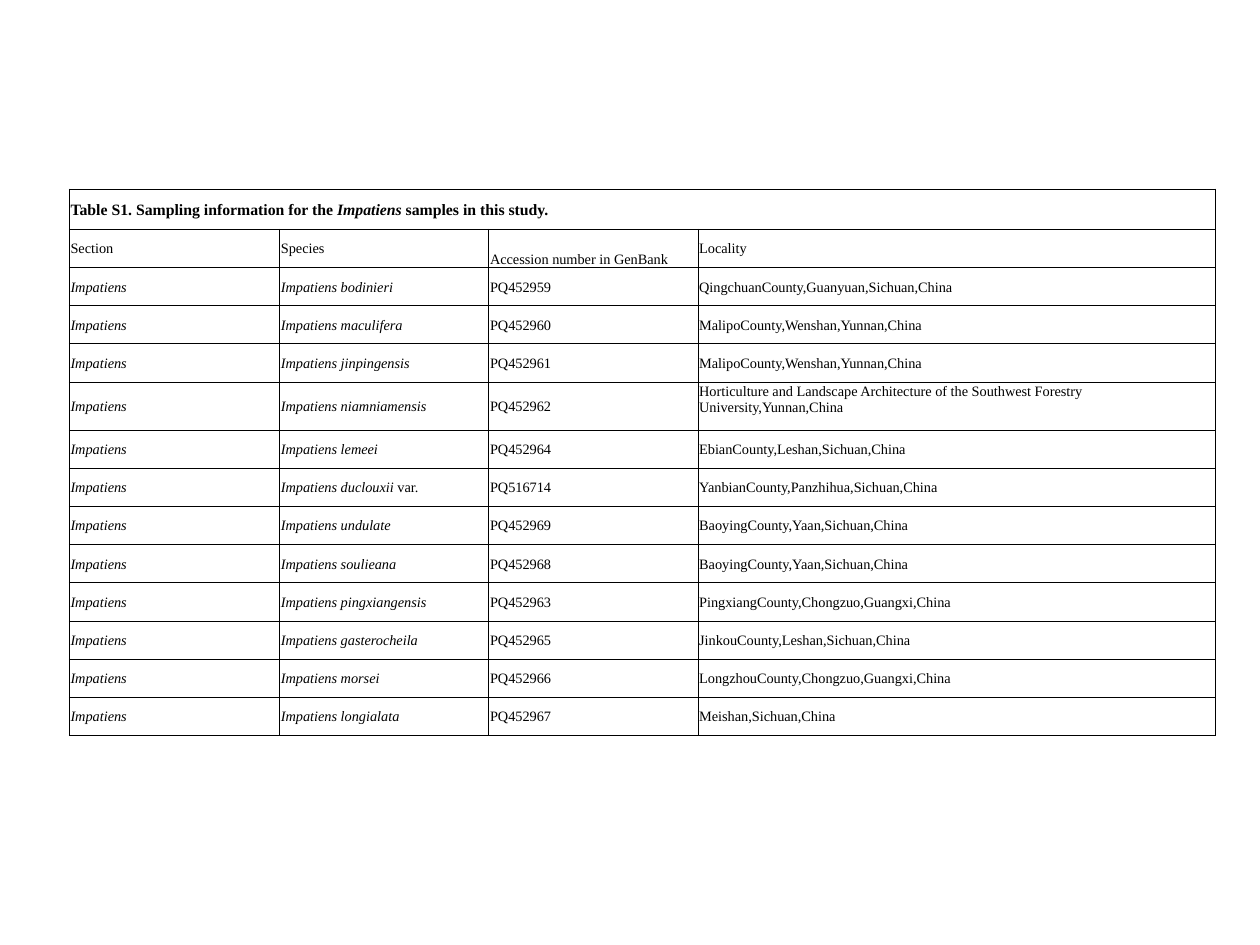
from lxml import etree
from pptx import Presentation
from pptx.dml.color import RGBColor
from pptx.enum import text
from pptx.oxml.ns import qn
from pptx.util import Inches, Pt

BLACK = RGBColor(0, 0, 0)
FONT = "Times New Roman"
LEFT, TOP, BOTTOM = 0.55, 1.5, 5.84
COLUMN_WIDTHS = [1.67, 1.66, 1.66, 4.11]
TITLE_HEIGHT, TALL_HEIGHT = 0.32, 0.38

# Content: a cell is a list of (text, italic) runs
GENUS = "Impatiens"
TITLE = [("Table S1. Sampling information for the ", False),
         (GENUS + " ", True), ("samples in this study.", False)]
HEADERS = ["Section", "Species", "Accession number in GenBank", "Locality"]
# Species epithet, accession number, locality
SAMPLES = [
    ("bodinieri", "PQ452959", "QingchuanCounty,Guanyuan,Sichuan,China"),
    ("maculifera", "PQ452960", "MalipoCounty,Wenshan,Yunnan,China"),
    ("jinpingensis", "PQ452961", "MalipoCounty,Wenshan,Yunnan,China"),
    ("niamniamensis", "PQ452962", "Horticulture and Landscape Architecture of "
     "the Southwest Forestry University,Yunnan,China"),
    ("lemeei", "PQ452964", "EbianCounty,Leshan,Sichuan,China"),
    ("duclouxii", "PQ516714", "YanbianCounty,Panzhihua,Sichuan,China"),
    ("undulate", "PQ452969", "BaoyingCounty,Yaan,Sichuan,China"),
    ("soulieana", "PQ452968", "BaoyingCounty,Yaan,Sichuan,China"),
    ("pingxiangensis", "PQ452963", "PingxiangCounty,Chongzuo,Guangxi,China"),
    ("gasterocheila", "PQ452965", "JinkouCounty,Leshan,Sichuan,China"),
    ("morsei", "PQ452966", "LongzhouCounty,Chongzuo,Guangxi,China"),
    ("longialata", "PQ452967", "Meishan,Sichuan,China"),
]
SUFFIXES = {"duclouxii": " var."}
TALL_ROW = 5


def sample_cells(epithet, accession, locality):
    species = [(f"{GENUS} {epithet}", True)]
    if epithet in SUFFIXES:
        species.append((SUFFIXES[epithet], False))
    return [[(GENUS, True)], species, [(accession, False)], [(locality, False)]]


def add_borders(cell):
    properties = cell._tc.get_or_add_tcPr()
    for position, side in enumerate(("lnL", "lnR", "lnT", "lnB")):
        line = etree.Element(qn(f"a:{side}"), w=str(Pt(0.5)))
        fill = etree.SubElement(line, qn("a:solidFill"))
        etree.SubElement(fill, qn("a:srgbClr"), val=str(BLACK))
        properties.insert(position, line)


def format_cell(cell):
    cell.fill.background()
    cell.margin_left = cell.margin_right = cell.margin_top = Inches(0.01)
    cell.margin_bottom = 0
    cell.vertical_anchor = text.MSO_ANCHOR.MIDDLE
    add_borders(cell)


def write_cell(cell, runs, size=8.2, bold=False):
    para = cell.text_frame.paragraphs[0]
    for words, italic in runs:
        span = para.add_run()
        span.text = words
        span.font.name, span.font.size = FONT, Pt(size)
        span.font.bold, span.font.italic = bold, italic
        span.font.color.rgb = BLACK


deck = Presentation()
deck.slide_width, deck.slide_height = Inches(10), Inches(7.5)
page = deck.slides.add_slide(deck.slide_layouts[6])

# Table grid: equal rows apart from the title and the two-line locality
rows = [[[(header, False)] for header in HEADERS]]
rows += [sample_cells(*sample) for sample in SAMPLES]
row_height = (BOTTOM - TOP - TITLE_HEIGHT - TALL_HEIGHT) / (len(rows) - 1)
special_heights = {0: TITLE_HEIGHT, TALL_ROW: TALL_HEIGHT}
table = page.shapes.add_table(
    len(rows) + 1, len(HEADERS), Inches(LEFT), Inches(TOP),
    Inches(sum(COLUMN_WIDTHS)), Inches(BOTTOM - TOP)).table
table.first_row = table.horz_banding = False
for column, width in zip(table.columns, COLUMN_WIDTHS):
    column.width = Inches(width)
for index, row in enumerate(table.rows):
    row.height = Inches(special_heights.get(index, row_height))
for cell in table.iter_cells():
    format_cell(cell)

# Title row across all columns
table.cell(0, 0).merge(table.cell(0, len(HEADERS) - 1))
write_cell(table.cell(0, 0), TITLE, size=9, bold=True)

# Headers and samples
for row_index, cells in enumerate(rows, start=1):
    for column_index, runs in enumerate(cells):
        write_cell(table.cell(row_index, column_index), runs)
table.cell(1, 2).vertical_anchor = text.MSO_ANCHOR.BOTTOM
table.cell(TALL_ROW, 3).vertical_anchor = text.MSO_ANCHOR.TOP

deck.save("out.pptx")
